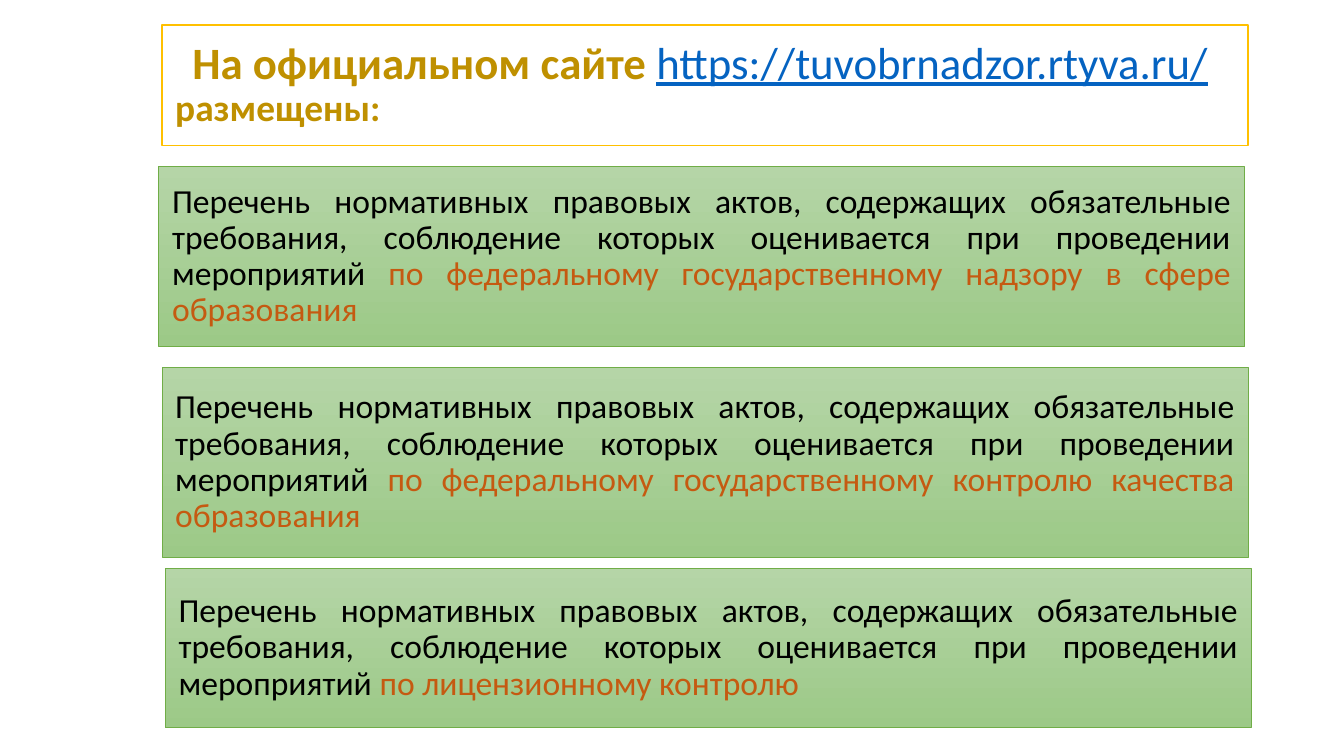
"""Build a slide listing the legal act registers published on an official site."""
from dataclasses import dataclass

import pptx
import pptx.dml.color
import pptx.enum.shapes
import pptx.enum.text
import pptx.util

ALIGN = pptx.enum.text.PP_ALIGN
WIDTH = 581.8
GOLD, BLACK, ORANGE = "BF9000", "000000", "C55A11"
INTRO = ("Перечень нормативных правовых актов, содержащих обязательные требования, "
         "соблюдение которых оценивается при проведении мероприятий ")


@dataclass
class Span:
    text: str
    color: str
    size: float = 18
    bold: bool = False
    underline: bool = False


@dataclass
class Panel:
    left: float
    top: float
    height: float
    topic: str


PANELS = [
    Panel(85, 89.2, 96.5, "по федеральному государственному надзору в сфере образования "),
    Panel(86.8, 196.7, 102, "по федеральному государственному контролю качества образования "),
    Panel(88.6, 304.6, 85.2, "по лицензионному контролю"),
]
HEADING = [
    (ALIGN.CENTER, [Span("На официальном сайте ", GOLD, 24, bold=True),
                    Span("https://tuvobrnadzor.rtyva.ru/", "0563C1", 24, underline=True),
                    Span(" ", GOLD, 24)]),
    (ALIGN.LEFT, [Span("размещены:", GOLD, 20, bold=True)]),
]


def rgb(value: str) -> pptx.dml.color.RGBColor:
    return pptx.dml.color.RGBColor.from_string(value)


def apply(target, formats: dict) -> None:
    for name, value in formats.items():
        setattr(target, name, value)


def place(box, left: float, top: float, height: float) -> None:
    lengths = {"left": left, "top": top, "width": WIDTH, "height": height}
    apply(box, {name: pptx.util.Pt(value) for name, value in lengths.items()})


def outline(box, color: str, width: float) -> None:
    box.line.color.rgb = rgb(color)
    box.line.width = pptx.util.Pt(width)


def write(box, paragraphs: list) -> None:
    frame = box.text_frame
    apply(frame, {
        "word_wrap": True,
        "auto_size": pptx.enum.text.MSO_AUTO_SIZE.NONE,
        "vertical_anchor": pptx.enum.text.MSO_ANCHOR.MIDDLE,
        "margin_left": pptx.util.Pt(7.2), "margin_right": pptx.util.Pt(7.2),
        "margin_top": pptx.util.Pt(3.6), "margin_bottom": pptx.util.Pt(3.6),
    })
    for index, (alignment, spans) in enumerate(paragraphs):
        para = frame.add_paragraph() if index else frame.paragraphs[0]
        apply(para, {"alignment": alignment, "line_spacing": 0.9,
                     "space_before": pptx.util.Pt(0)})
        for span in spans:
            run = para.add_run()
            run.text = span.text
            apply(run.font, {"name": "Calibri", "size": pptx.util.Pt(span.size),
                             "bold": span.bold, "underline": span.underline})
            run.font.color.rgb = rgb(span.color)


def add_rectangle(page):
    box = page.shapes.add_shape(pptx.enum.shapes.MSO_SHAPE.RECTANGLE, 0, 0, 0, 0)
    box.shadow.inherit = False
    return box


def draw_heading(box) -> None:
    place(box, 86.8, 13.6, 64.4)
    box.fill.solid()
    box.fill.fore_color.rgb = rgb("FFFFFF")
    outline(box, "FFC000", 1)
    write(box, HEADING)


def draw_panel(box, panel: Panel) -> None:
    place(box, panel.left, panel.top, panel.height)
    box.fill.gradient()
    box.fill.gradient_angle = 270
    for stop, color in zip(box.fill.gradient_stops, ("B5D5A7", "9CC987")):
        stop.color.rgb = rgb(color)
    outline(box, "70AD47", 0.5)
    write(box, [(ALIGN.JUSTIFY, [Span(INTRO, BLACK), Span(panel.topic, ORANGE)])])


def main() -> None:
    deck = pptx.Presentation()
    apply(deck, {"slide_width": pptx.util.Pt(720), "slide_height": pptx.util.Pt(405)})
    page = deck.slides.add_slide(deck.slide_layouts[5])
    draw_panel(page.shapes.title, PANELS[0])
    draw_heading(add_rectangle(page))
    for panel in PANELS[1:]:
        draw_panel(add_rectangle(page), panel)
    deck.save("out.pptx")


if __name__ == "__main__":
    main()
